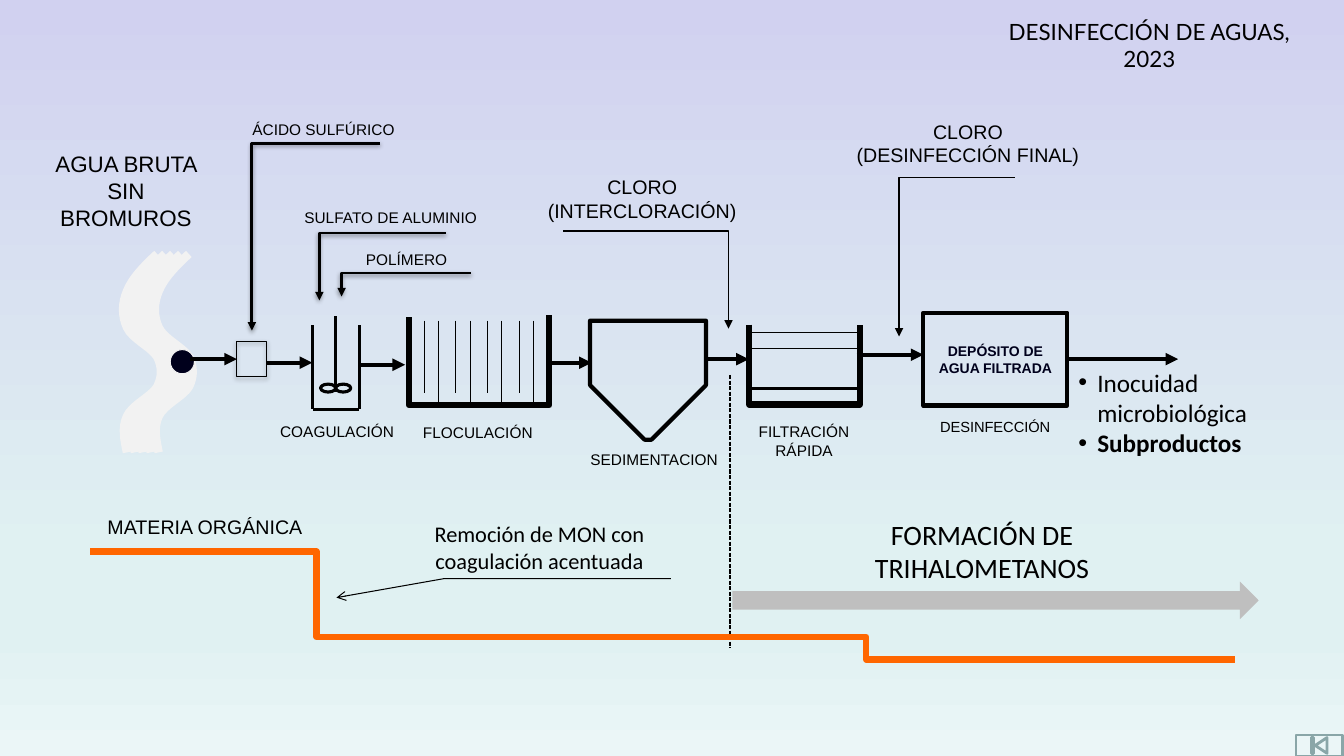
from copy import deepcopy
from dataclasses import dataclass
from lxml.etree import SubElement
from pptx import Presentation
from pptx.dml.color import RGBColor
from pptx.enum.dml import MSO_LINE
from pptx.enum.shapes import MSO_CONNECTOR as Link, MSO_SHAPE as Shape
from pptx.enum.text import MSO_ANCHOR as Anchor, MSO_AUTO_SIZE as AutoSize, PP_ALIGN as Align
from pptx.oxml.ns import qn
from pptx.slide import Slide
from pptx.util import Cm, Pt

COLORS = {"ink": "000000", "navy": "00001C", "river": "F2F2F2", "organic": "FF6600",
          "formation": "BFBFBF", "button": "8AA6A8"}
SKY = [(0, "D1D1F0"), (0.74, "E0F1F2"), (0.83, "E0F1F2"), (1, "EBF6F7")]
RIVER = [(0.89, 0),
         (0.56, 0.3), (0.25, 0.63), (0.13, 0.94),
         (0, 1.24), (0, 1.57), (0.13, 1.85),
         (0.25, 2.13), (0.76, 2.36), (0.89, 2.59),
         (1.02, 2.84), (1.02, 3.1), (0.89, 3.35),
         (0.76, 3.58), (0.25, 3.81), (0.13, 4.09),
         (0, 4.37), (0.06, 4.67), (0.13, 5)]


def rgb(name):
    return RGBColor.from_string(COLORS[name])


def style_line(line, color, weight, tail=None):
    line.color.rgb = rgb(color)
    line.width = Pt(weight)
    if tail:
        SubElement(line._get_or_add_ln(), qn("a:tailEnd"), type=tail)


def style_runs(frame, size, font, align=None, color="ink", bold=None):
    for paragraph in frame.paragraphs:
        if align is not None:
            paragraph.alignment = align
        for run in paragraph.runs:
            run.font.size = Pt(size)
            run.font.name = font
            run.font.bold = bold
            run.font.color.rgb = rgb(color)


def set_effects(shape, shadow):
    effects = SubElement(shape.element.spPr, qn("a:effectLst"))
    if shadow:
        outer = SubElement(effects, qn("a:outerShdw"), blurRad="40000", dist="20000",
                           dir="5400000", rotWithShape="0")
        ink = SubElement(outer, qn("a:srgbClr"), val=COLORS["ink"])
        SubElement(ink, qn("a:alpha"), val="38000")


def bend_segments(shape):
    geometry = shape.element.spPr.find(".//" + qn("a:pathLst"))[0]
    segments = geometry.findall(qn("a:lnTo"))
    for first in range(0, len(segments), 3):
        curve = SubElement(geometry, qn("a:cubicBezTo"))
        for segment in segments[first:first + 3]:
            curve.append(segment[0])
            geometry.remove(segment)


@dataclass
class Region:
    slide: Slide
    left: float
    top: float

    def at(self, x, y):
        return Cm(self.left + x), Cm(self.top + y)

    def label(self, words, x, y, width, height, size=11, font="Arial", align=Align.LEFT):
        box = self.slide.shapes.add_textbox(*self.at(x, y), Cm(width), Cm(height))
        box.text_frame.word_wrap = True
        box.text_frame.text = words
        style_runs(box.text_frame, size, font, align)

    def place(self, holder, x, y, width, height):
        holder.left, holder.top = self.at(x, y)
        holder.width, holder.height = Cm(width), Cm(height)
        holder.text_frame.auto_size = AutoSize.NONE
        holder.text_frame.vertical_anchor = Anchor.TOP

    def figure(self, kind, x, y, width, height, weight=0, fill=None, line="ink", shadow=False):
        shape = self.slide.shapes.add_shape(kind, *self.at(x, y), Cm(width), Cm(height))
        if fill:
            shape.fill.solid()
            shape.fill.fore_color.rgb = rgb(fill)
        else:
            shape.fill.background()
        if weight:
            style_line(shape.line, line, weight)
        else:
            shape.line.fill.background()
        set_effects(shape, shadow)
        return shape

    def connect(self, start, end, weight, tail=None, kind=Link.STRAIGHT, color="ink", shadow=False):
        link = self.slide.shapes.add_connector(kind, *self.at(*start), *self.at(*end))
        style_line(link.line, color, weight, tail)
        set_effects(link, shadow)
        return link

    def flow(self, start, end):
        return self.connect(start, end, 3, "triangle")

    def dose(self, start, end, weight=2, shadow=True):
        link = self.connect(start, end, weight, "triangle", Link.ELBOW, shadow=shadow)
        link.element.spPr.find(qn("a:prstGeom")).set("prst", "bentConnector2")

    def step(self, start, end, bend):
        link = self.connect(start, end, 4.5, kind=Link.ELBOW, color="organic")
        geometry = link.element.spPr.find(qn("a:prstGeom"))
        guides = geometry.find(qn("a:avLst"))
        if guides is None:
            guides = SubElement(geometry, qn("a:avLst"))
        SubElement(guides, qn("a:gd"), name="adj1", fmla=f"val {round(bend * 100000)}")

    def outline(self, points, weight, color="ink", tail=None):
        start, *rest = [self.at(*point) for point in points]
        builder = self.slide.shapes.build_freeform(*start)
        builder.add_line_segments(rest, close=False)
        shape = builder.convert_to_shape()
        shape.fill.background()
        style_line(shape.line, color, weight, tail)
        shape.shadow.inherit = False
        return shape


def paint_background(slide):
    fill = slide.background.fill
    fill.gradient()
    fill.gradient_angle = 270
    stops = slide.element.find(".//" + qn("a:gsLst"))
    while len(stops) < len(SKY):
        stops.append(deepcopy(stops[0]))
    for stop, (position, color) in zip(fill.gradient_stops, SKY):
        stop.position = position
        stop.color.rgb = RGBColor.from_string(color)


def header(region):
    title = region.slide.shapes.title
    region.place(title, 0, 0, 8.05, 0.94)
    title.text_frame.text = "DESINFECCIÓN DE AGUAS, 2023"
    style_runs(title.text_frame, 16, "Lato", Align.CENTER)


def intake(region):
    region.label("AGUA BRUTA SIN BROMUROS", 0, 0.77, 4.17, 2.31, 16, align=Align.CENTER)
    region.label("ÁCIDO SULFÚRICO", 5.02, 0, 5.11, 0.74)
    region.dose((8.48, 0.71), (5.26, 5.43))
    for strand in range(5):
        x = 1.98 + 0.2 * strand
        bend_segments(region.outline([(x + dx, 3.5 + dy) for dx, dy in RIVER], 6, "river"))
    region.figure(Shape.OVAL, 3.2, 5.91, 0.61, 0.61, 0.75, "navy", "river")
    mixer = region.figure(Shape.RECTANGLE, 4.88, 5.71, 0.74, 0.88, 0.75, shadow=True)
    region.flow((3.71, 6.15), (4.88, 6.15)).end_connect(mixer, 1)
    region.flow((5.64, 6.24), (6.78, 6.24))


def coagulation(region):
    region.label("SULFATO DE ALUMINIO", 0.61, 0, 5.11, 0.74)
    region.dose((4.42, 0.74), (1.24, 2.44))
    region.label("POLÍMERO", 2.16, 1.04, 2.84, 0.74)
    region.dose((5.05, 1.75), (1.8, 2.34))
    for wall in (1.07, 2.24):
        region.connect((wall, 3.07), (wall, 5.18), 2.25)
    region.connect((1.07, 5.18), (2.24, 5.18), 2.25)
    for blade in (1.27, 1.65):
        region.figure(Shape.OVAL, blade, 4.55, 0.38, 0.2, 2.25)
    region.connect((1.65, 4.75), (1.65, 2.84), 2.25)
    region.label("COAGULACIÓN", 0, 5.38, 3.61, 0.74)
    region.flow((2.26, 4.06), (3.4, 4.06))


def flocculation(region):
    for pair in range(4):
        for x, bottom in ((0.38, 1.96), (0.74, 2.26)):
            baffle = x + 0.8 * pair
            region.connect((baffle, 0.13), (baffle, bottom), 0.75)
    region.outline([(0, 0.05), (0, 2.26), (3.53, 2.26), (3.53, 0)], 4.5)
    region.label("FLOCULACIÓN", 0.1, 2.59, 3.73, 0.74)
    region.flow((3.56, 1.19), (4.6, 1.19))


def sedimentation(region):
    tank = region.figure(Shape.SNIP_2_SAME_RECTANGLE, 0.24, 0, 2.92, 3, 3)
    tank.rotation = 180
    tank.adjustments[0], tank.adjustments[1] = 0.471, 0
    region.label("SEDIMENTACION", 0, 3.15, 4.22, 0.74)
    region.flow((3.18, 0.97), (4.24, 0.97))


def filtration(region):
    region.label("CLORO (INTERCLORACIÓN)", 0, 0, 5.49, 1.45, 14, align=Align.CENTER)
    region.dose((0.76, 1.53), (4.92, 3.99), 1, False)
    for top, height, weight in ((4.09, 1.4, 1), (5.49, 0.41, 2.25), (4.5, 0.99, 0.75)):
        region.figure(Shape.RECTANGLE, 5.44, top, 2.79, height, weight)
    region.outline([(5.44, 3.89), (5.44, 5.9), (8.23, 5.9), (8.23, 3.89)], 4.5)
    region.label("FILTRACIÓN RÁPIDA", 5.02, 6.23, 3.61, 1.19, align=Align.CENTER)


def disinfection(region):
    region.label("CLORO (DESINFECCIÓN FINAL)", 0, -0.01, 6.27, 1.45, 14, align=Align.CENTER)
    region.dose((4.32, 1.57), (1.4, 5.58), 1, False)
    deposit = region.figure(Shape.RECTANGLE, 2.01, 4.98, 3.63, 2.34, 3)
    deposit.text_frame.word_wrap = True
    deposit.text_frame.text = "DEPÓSITO DE AGUA FILTRADA"
    style_runs(deposit.text_frame, 10, "Arial", Align.CENTER, "navy", True)
    region.flow((0.33, 6.04), (2.01, 6.04))
    region.flow((5.64, 6.15), (8.43, 6.15)).begin_connect(deposit, 3)
    region.label("DESINFECCIÓN", 2.18, 7.5, 3.4, 0.71, 10.5)
    results = region.slide.placeholders[1]
    region.place(results, 5.66, 6.22, 5.56, 2.57)
    results.text_frame.text = "Inocuidad microbiológica\nSubproductos"
    style_runs(results.text_frame, 18, "Calibri")
    for paragraph in results.text_frame.paragraphs:
        paragraph.space_before = Pt(0)
        properties = paragraph._p.get_or_add_pPr()
        properties.set("marL", str(Cm(0.48)))
        properties.set("indent", str(-Cm(0.48)))
    results.text_frame.paragraphs[1].runs[0].font.bold = True


def organic_matter(region):
    region.label("MATERIA ORGÁNICA", 0.18, 0, 5.69, 0.86, 14)
    region.step((0, 1.05), (19.38, 3.2), 0.294)
    region.step((17.96, 3.2), (28.85, 3.77), 0.146)
    region.label("Remoción de MON con coagulación acentuada", 8.18, 0.13, 6.27, 1.63,
                 16, "Calibri", Align.CENTER)
    region.outline([(14.63, 1.73), (8.92, 1.73), (6.2, 2.21)], 0.75, tail="arrow")


def trihalomethanes(region):
    region.connect((0, 0), (0, 6.86), 1).line.dash_style = MSO_LINE.SQUARE_DOT
    region.figure(Shape.RIGHT_ARROW, 0.06, 5.21, 13.26, 0.94, fill="formation")
    region.label("FORMACIÓN DE TRIHALOMETANOS", 2.11, 3.46, 8.48, 1.96, 20, "Calibri", Align.CENTER)


def navigation(region):
    region.figure(Shape.ACTION_BUTTON_BEGINNING, 0, 0, 1.17, 0.53, 2, line="button")


def main():
    deck = Presentation()
    deck.slide_width, deck.slide_height = Cm(33.87), Cm(19.05)
    slide = deck.slides.add_slide(deck.slide_layouts[1])
    paint_background(slide)
    for draw, left, top in ((navigation, 32.66, 18.52), (header, 24.94, 0.33),
                            (intake, 1.09, 2.9), (coagulation, 6.81, 5.13),
                            (flocculation, 10.31, 7.95), (sedimentation, 14.63, 8.08),
                            (filtration, 13.44, 4.29), (disinfection, 21.26, 2.9),
                            (trihalomethanes, 18.4, 9.45), (organic_matter, 2.28, 12.85)):
        draw(Region(slide, left, top))
    deck.save("out.pptx")


if __name__ == "__main__":
    main()
